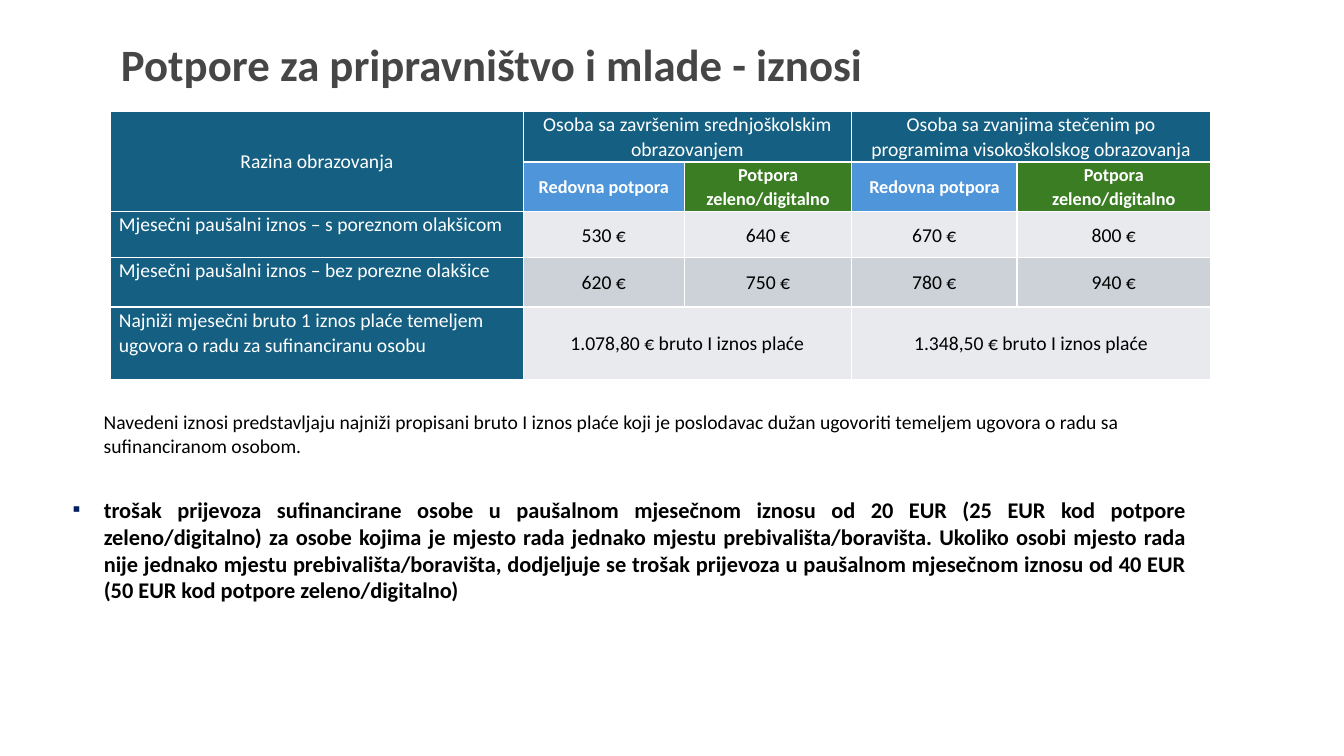
from lxml.etree import SubElement
from pptx import Presentation
from pptx.dml.color import RGBColor
from pptx.enum.text import MSO_ANCHOR, MSO_AUTO_SIZE, PP_ALIGN
from pptx.oxml.ns import qn
from pptx.util import Inches, Pt

WHITE = RGBColor(255, 255, 255)
BLACK = RGBColor(0, 0, 0)
GRAY = RGBColor(0x46, 0x46, 0x46)
NAVY = RGBColor(0x00, 0x20, 0x60)
TEAL = RGBColor(0x15, 0x60, 0x82)
BLUE = RGBColor(0x4E, 0x95, 0xD9)
GREEN = RGBColor(0x3B, 0x7D, 0x23)
LIGHT = RGBColor(0xE8, 0xEA, 0xED)
DARK = RGBColor(0xCC, 0xD2, 0xD8)

COLS = [30.68, 12, 12.45, 12.3, 14.4]
ROWS = [5.2, 6.53, 6.13, 6.53, 9.6]
SIDE, REG, ECO = "Razina obrazovanja", "Redovna potpora", "Potpora zeleno/digitalno"
GRID = [
    [SIDE, "Osoba sa završenim srednjoškolskim obrazovanjem", "",
     "Osoba sa zvanjima stečenim po programima visokoškolskog obrazovanja", ""],
    ["", REG, ECO, REG, ECO],
    ["Mjesečni paušalni iznos – s poreznom olakšicom",
     "530 €", "640 €", "670 €", "800 €"],
    ["Mjesečni paušalni iznos – bez porezne olakšice",
     "620 €", "750 €", "780 €", "940 €"],
    ["Najniži mjesečni bruto 1 iznos plaće temeljem ugovora o radu "
     "za sufinanciranu osobu",
     "1.078,80 € bruto I iznos plaće", "", "1.348,50 € bruto I iznos plaće", ""],
]
SPANS = [(0, 0, 1, 0), (0, 1, 0, 2), (0, 3, 0, 4), (4, 1, 4, 2), (4, 3, 4, 4)]
NOTE = ("Navedeni iznosi predstavljaju najniži propisani bruto I iznos plaće koji je "
        "poslodavac dužan ugovoriti temeljem ugovora o radu sa sufinanciranom osobom.")
COST = ("trošak prijevoza sufinancirane osobe u paušalnom mjesečnom iznosu od 20 EUR "
        "(25 EUR kod potpore zeleno/digitalno) za osobe kojima je mjesto rada jednako "
        "mjestu prebivališta/boravišta. Ukoliko osobi mjesto rada nije jednako mjestu "
        "prebivališta/boravišta, dodjeljuje se trošak prijevoza u paušalnom mjesečnom "
        "iznosu od 40 EUR (50 EUR kod potpore zeleno/digitalno)")


def write(frame, text, size=14, color=BLACK, bold=False, align=PP_ALIGN.LEFT,
          lead=1.0, mark=None):
    para = frame.paragraphs[0]
    if mark:
        props = para._p.get_or_add_pPr()
        props.set("marL", str(Inches(0.31)))
        props.set("indent", str(-Inches(0.31)))
        tint = SubElement(props, qn("a:buClr"))
        SubElement(tint, qn("a:srgbClr")).set("val", str(NAVY))
        SubElement(props, qn("a:buChar")).set("char", mark)
    para.alignment = align
    para.line_spacing = lead
    para.space_before = Pt(0)
    run = para.add_run()
    run.text = text
    run.font.name = "Calibri"
    run.font.size = Pt(size)
    run.font.bold = bold
    run.font.color.rgb = color


def paint(row, col):
    if col == 0 or row == 0:
        return TEAL
    if row == 1:
        return BLUE if col % 2 else GREEN
    return DARK if row == 3 else LIGHT


class Page:
    def __init__(self):
        self.deck = Presentation()
        self.deck.slide_width = Inches(13.33)
        self.deck.slide_height = Inches(7.5)
        self.slide = self.deck.slides.add_slide(self.deck.slide_layouts[1])

    def wide(self, share):
        return round(self.deck.slide_width * share / 100)

    def high(self, share):
        return round(self.deck.slide_height * share / 100)

    def box(self, x, y, w, h):
        return self.wide(x), self.high(y), self.wide(w), self.high(h)

    def place(self, shape, area):
        shape.left, shape.top, shape.width, shape.height = self.box(*area)
        shape.text_frame.word_wrap = True
        shape.text_frame.auto_size = MSO_AUTO_SIZE.NONE
        return shape.text_frame

    def title(self, text, area):
        frame = self.place(self.slide.shapes.title, area)
        frame.vertical_anchor = MSO_ANCHOR.BOTTOM
        write(frame, text, size=32, color=GRAY, bold=True, lead=0.9)

    def list(self, text, area):
        frame = self.place(self.slide.placeholders[1], area)
        write(frame, text, size=16, bold=True, align=PP_ALIGN.JUSTIFY, mark="▪")

    def note(self, text, area):
        shape = self.slide.shapes.add_textbox(*self.box(*area))
        write(self.place(shape, area), text)

    def edge(self, cell):
        props = cell._tc.get_or_add_tcPr()
        for side in "LRTB":
            line = SubElement(props, qn(f"a:ln{side}"))
            line.set("w", str(Pt(1)))
            fill = SubElement(line, qn("a:solidFill"))
            SubElement(fill, qn("a:srgbClr")).set("val", str(WHITE))

    def cell(self, cell, text, row, col):
        cell.margin_left = cell.margin_right = Inches(0.08)
        cell.margin_top = cell.margin_bottom = 0
        label = col == 0 and row > 1
        cell.vertical_anchor = MSO_ANCHOR.TOP if label else MSO_ANCHOR.MIDDLE
        self.edge(cell)
        cell.fill.solid()
        cell.fill.fore_color.rgb = paint(row, col)
        if text:
            sub = row == 1
            write(cell.text_frame, text, size=13 if sub else 14, bold=sub,
                  color=WHITE if row < 2 or col == 0 else BLACK, lead=1.07,
                  align=PP_ALIGN.LEFT if label else PP_ALIGN.CENTER)

    def table(self, x, y):
        area = self.box(x, y, sum(COLS), sum(ROWS))
        table = self.slide.shapes.add_table(len(ROWS), len(COLS), *area).table
        table.first_row = table.horz_banding = False
        for col, share in zip(table.columns, COLS):
            col.width = self.wide(share)
        for row, share in zip(table.rows, ROWS):
            row.height = self.high(share)
        for top, left, low, right in SPANS:
            table.cell(top, left).merge(table.cell(low, right))
        for row, texts in enumerate(GRID):
            for col, text in enumerate(texts):
                self.cell(table.cell(row, col), text, row, col)


def main():
    page = Page()
    page.table(8.25, 14.67)
    page.list(COST, (4.65, 64.93, 84.4, 15.73))
    page.title("Potpore za pripravništvo i mlade - iznosi", (8.25, 6.67, 90, 6))
    page.note(NOTE, (6.98, 53.6, 84.4, 7.6))
    page.deck.save("out.pptx")


if __name__ == "__main__":
    main()
